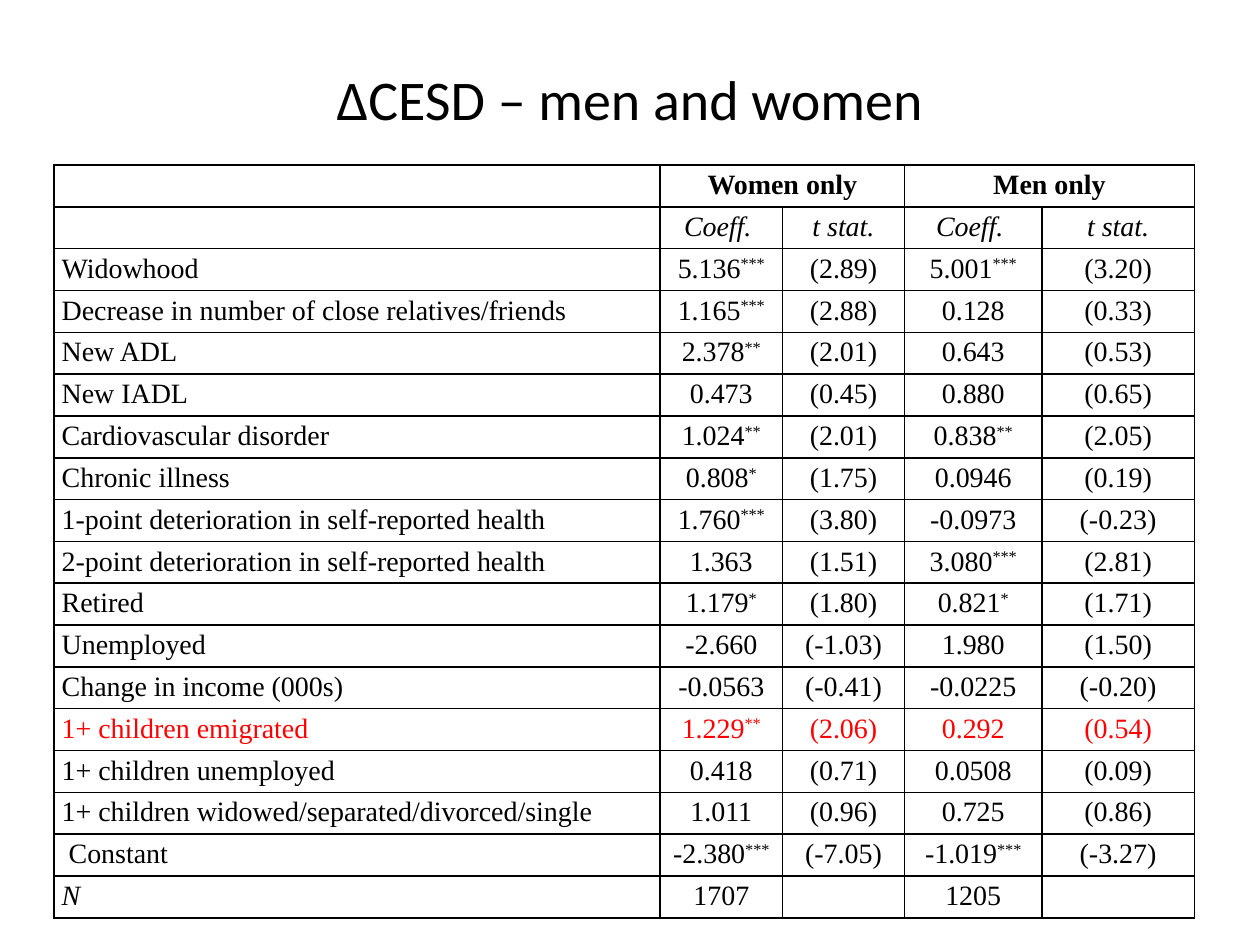
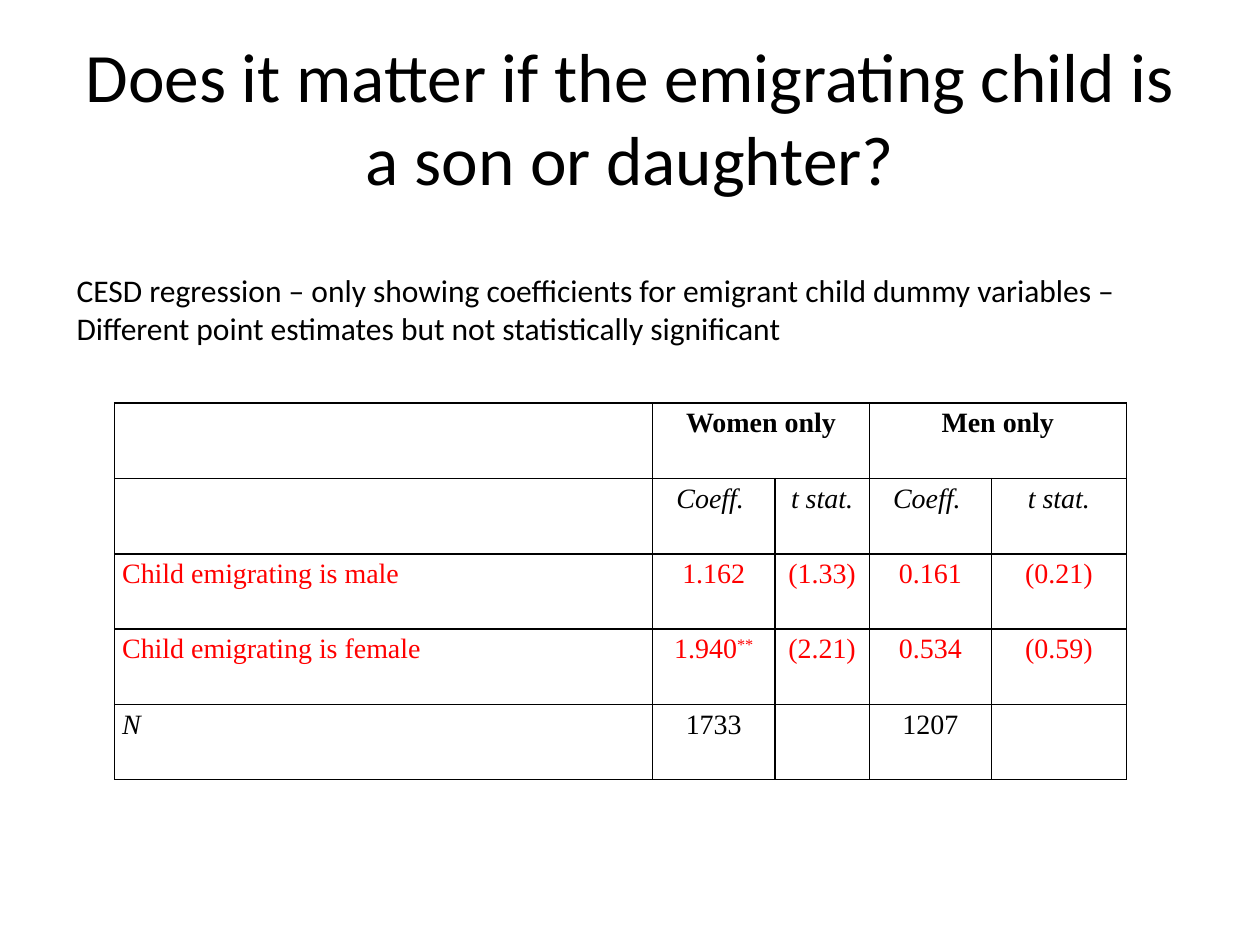
"""Builds two slides of regression tables on changes in CESD scores."""
from dataclasses import dataclass
from typing import NamedTuple

from lxml.etree import SubElement as Sub
from pptx import Presentation
from pptx.dml.color import RGBColor
from pptx.enum.text import MSO_ANCHOR as Anchor, PP_ALIGN as Align
from pptx.oxml.ns import qn
from pptx.util import Inches, Pt

BLACK = RGBColor(0x00, 0x00, 0x00)
RED = RGBColor(0xFF, 0x00, 0x00)
SANS = "Calibri"
SERIF = "Times New Roman"


class Row(NamedTuple):
    name: str
    vals: tuple[str, ...]
    tint: RGBColor = BLACK
    bold: bool = False
    slant: bool = False


class Box(NamedTuple):
    left: float
    top: float
    width: float
    height: float


@dataclass
class Grid:
    left: float
    top: float
    height: float
    cols: tuple[float, ...]
    body: list[Row]


@dataclass
class Words:
    box: Box
    lines: tuple[str, ...]
    size: float
    align: Align = Align.CENTER
    anchor: Anchor = Anchor.MIDDLE


HEADS = [
    Row("", ("Women only", "", "Men only", ""), bold=True),
    Row("", ("Coeff. ", "t stat.") * 2, slant=True),
]

FULL = Grid(0.43, 1.31, 5.98, (4.81, 0.97, 0.97, 1.09, 1.21), [
    Row("Widowhood", ("5.136***", "(2.89)", "5.001***", "(3.20)")),
    Row("Decrease in number of close relatives/friends",
        ("1.165***", "(2.88)", "0.128", "(0.33)")),
    Row("New ADL", ("2.378**", "(2.01)", "0.643", "(0.53)")),
    Row("New IADL", ("0.473", "(0.45)", "0.880", "(0.65)")),
    Row("Cardiovascular disorder", ("1.024**", "(2.01)", "0.838**", "(2.05)")),
    Row("Chronic illness", ("0.808*", "(1.75)", "0.0946", "(0.19)")),
    Row("1-point deterioration in self-reported health",
        ("1.760***", "(3.80)", "-0.0973", "(-0.23)")),
    Row("2-point deterioration in self-reported health",
        ("1.363", "(1.51)", "3.080***", "(2.81)")),
    Row("Retired", ("1.179*", "(1.80)", "0.821*", "(1.71)")),
    Row("Unemployed", ("-2.660", "(-1.03)", "1.980", "(1.50)")),
    Row("Change in income (000s)", ("-0.0563", "(-0.41)", "-0.0225", "(-0.20)")),
    Row("1+ children emigrated", ("1.229**", "(2.06)", "0.292", "(0.54)"), RED),
    Row("1+ children unemployed", ("0.418", "(0.71)", "0.0508", "(0.09)")),
    Row("1+ children widowed/separated/divorced/single",
        ("1.011", "(0.96)", "0.725", "(0.86)")),
    Row(" Constant", ("-2.380***", "(-7.05)", "-1.019***", "(-3.27)")),
    Row("N", ("1707", "", "1205", "")),
])

CHILD = Grid(0.91, 3.2, 2.99, (4.27, 0.97, 0.75, 0.97, 1.07), [
    Row("Child emigrating is male", ("1.162", "(1.33)", "0.161", "(0.21)"), RED),
    Row("Child emigrating is female", ("1.940**", "(2.21)", "0.534", "(0.59)"), RED),
    Row("N", ("1733", "", "1207", "")),
])

SLIDES = [
    ([Words(Box(0.5, 0, 9, 1.55), ("ΔCESD – men and women",), 32)], FULL),
    ([Words(Box(0.5, 0.3, 9, 1.25),
            ("Does it matter if the emigrating child is a son or daughter?",), 39.6),
      Words(Box(0.51, 2.1, 8.6, 0.71),
            ("CESD regression – only showing coefficients for emigrant child dummy variables –",
             "Different point estimates but not statistically significant"),
            18, Align.LEFT, Anchor.TOP)], CHILD),
]


def style(font, face: str, size: float, tint: RGBColor) -> None:
    """Set face, size and colour of a font."""
    font.name, font.size = face, Pt(size)
    font.color.rgb = tint


def write(slide, words: Words) -> None:
    """Add a text box with one paragraph per line."""
    frame = slide.shapes.add_textbox(*map(Inches, words.box)).text_frame
    frame.word_wrap = True
    frame.vertical_anchor = words.anchor
    frame.text = "\n".join(words.lines)
    for para in frame.paragraphs:
        para.alignment = words.align
        style(para.font, SANS, words.size, BLACK)


def edge(cell) -> None:
    """Clear the fill of a cell and rule its four sides."""
    cell.fill.background()
    props = cell._tc.get_or_add_tcPr()
    for spot, side in enumerate(("lnL", "lnR", "lnT", "lnB")):
        line = Sub(props, qn(f"a:{side}"), w=str(Pt(1)))
        Sub(Sub(line, qn("a:solidFill")), qn("a:srgbClr"), val=str(BLACK))
        props.insert(spot, line)


def fill(cell, text: str, row: Row, first: bool) -> None:
    """Write a cell, raising any significance stars."""
    cell.margin_left = cell.margin_right = Inches(0.06)
    cell.margin_top = cell.margin_bottom = 0
    para = cell.text_frame.paragraphs[0]
    para.alignment = Align.LEFT if first else Align.CENTER
    para.line_spacing = 1.15
    style(para.font, SERIF, 16, row.tint)
    para.font.bold = row.bold
    para.font.italic = row.slant or text == "N"
    base = text.rstrip("*")
    if base:
        para.add_run().text = base
    if base != text:
        stars = para.add_run()
        stars.text = text[len(base):]
        stars._r.get_or_add_rPr().set("baseline", "30000")


def draw(slide, grid: Grid) -> None:
    """Add a ruled table under the shared two-row head."""
    rows = HEADS + grid.body
    table = slide.shapes.add_table(
        len(rows), len(grid.cols), Inches(grid.left), Inches(grid.top),
        Inches(sum(grid.cols)), Inches(grid.height)).table
    table.first_row = table.horz_banding = False
    for col, width in zip(table.columns, grid.cols):
        col.width = Inches(width)
    for y, row in enumerate(rows):
        table.rows[y].height = Inches(grid.height / len(rows))
        for x, text in enumerate((row.name, *row.vals)):
            cell = table.cell(y, x)
            fill(cell, text, row, x == 0)
            edge(cell)
    for x in (1, 3):
        table.cell(0, x).merge(table.cell(0, x + 1))


def main() -> None:
    """Build and save the deck."""
    deck = Presentation()
    deck.slide_width, deck.slide_height = Inches(10), Inches(7.5)
    for texts, grid in SLIDES:
        slide = deck.slides.add_slide(deck.slide_layouts[6])
        for words in texts:
            write(slide, words)
        draw(slide, grid)
    deck.save("out.pptx")


if __name__ == "__main__":
    main()
